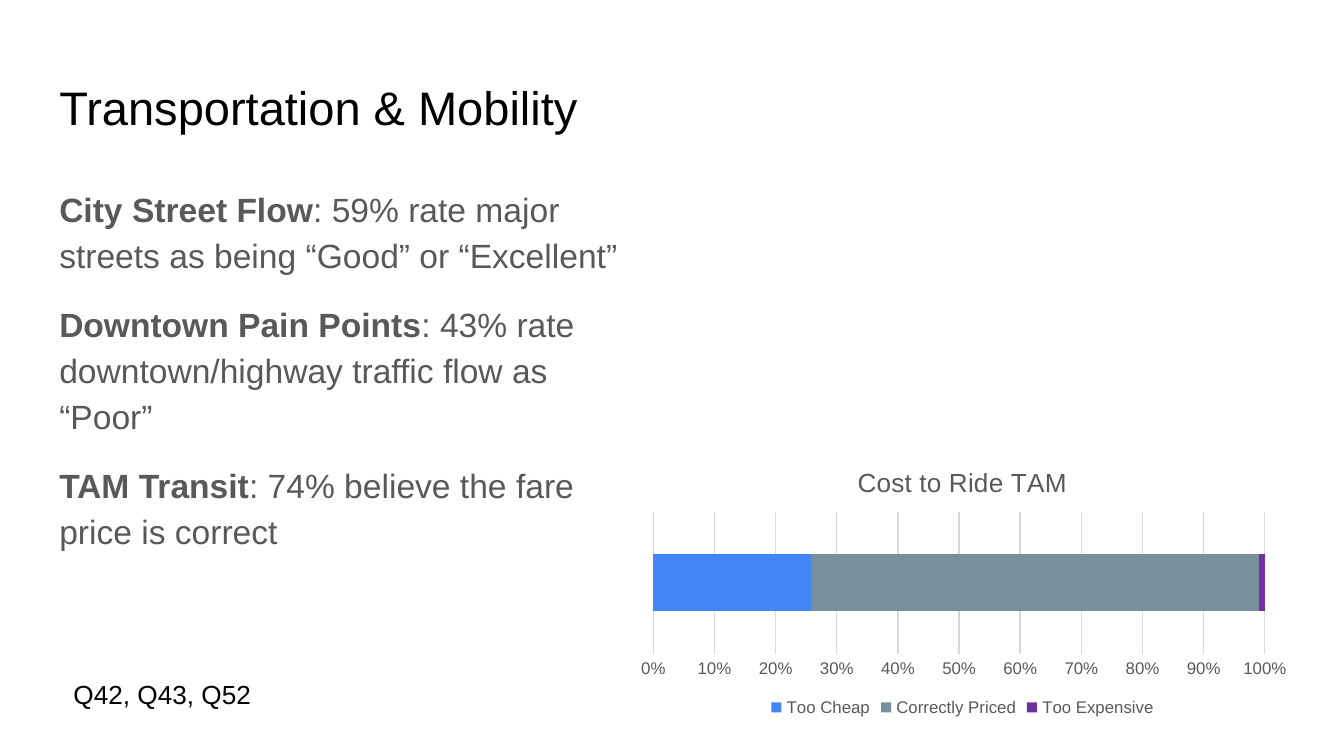
import pptx
import pptx.chart.data
import pptx.dml.color
import pptx.enum.chart
import pptx.enum.text
import pptx.oxml
import pptx.oxml.ns
import pptx.util
from pptx.util import Cm

FONT = "Arial"
BLACK = "000000"
GRAY = "595959"
TITLE = "Transportation & Mobility"
FINDINGS = [
    ("City Street Flow", ": 59% rate major streets as being “Good” or “Excellent”"),
    ("Downtown Pain Points", ": 43% rate downtown/highway traffic flow as “Poor”"),
    ("TAM Transit", ": 74% believe the fare price is correct"),
]
FARE_OPINIONS = [
    ("Too Cheap", 26, "4285F4"),
    ("Correctly Priced", 74, "78909C"),
    ("Too Expensive", 1, "7030A0"),
]
CHART_NAMESPACE = pptx.oxml.ns.nsdecls("c", "a")


def color(value):
    return pptx.dml.color.RGBColor.from_string(value)


def set_values(target, values):
    for name, value in values.items():
        setattr(target, name, value)


def format_font(font, size, fill, bold=False):
    set_values(font, {"name": FONT, "size": pptx.util.Pt(size), "bold": bold})
    font.fill.solid()
    font.fill.fore_color.rgb = color(fill)


def place(shape, left, top, width, height):
    set_values(shape, {"left": Cm(left), "top": Cm(top), "width": Cm(width), "height": Cm(height)})
    margins = ("margin_left", "margin_top", "margin_right", "margin_bottom")
    set_values(shape.text_frame, {name: Cm(0.25) for name in margins})
    set_values(shape.text_frame, {
        "word_wrap": True,
        "auto_size": pptx.enum.text.MSO_AUTO_SIZE.NONE,
        "vertical_anchor": pptx.enum.text.MSO_ANCHOR.TOP,
    })


def write_line(shape, text, size):
    paragraph = shape.text_frame.paragraphs[0]
    paragraph.alignment = pptx.enum.text.PP_ALIGN.LEFT
    run = paragraph.add_run()
    run.text = text
    format_font(run.font, size, BLACK)


def write_findings(shape):
    text_frame = shape.text_frame
    for index, finding in enumerate(FINDINGS):
        paragraph = text_frame.add_paragraph() if index else text_frame.paragraphs[0]
        properties = paragraph._p.get_or_add_pPr()
        properties.set("marL", "0")
        properties.set("indent", "0")
        pptx.oxml.ns.qn("a:buNone")
        properties.append(pptx.oxml.parse_xml(f'<a:buNone {pptx.oxml.ns.nsdecls("a")}/>'))
        set_values(paragraph, {
            "line_spacing": 1.15,
            "space_before": pptx.util.Pt(12 if index else 0),
            "space_after": pptx.util.Pt(12 if index == len(FINDINGS) - 1 else 0),
        })
        for text, bold in zip(finding, (True, False)):
            run = paragraph.add_run()
            run.text = text
            format_font(run.font, 18, GRAY, bold)


def format_axes(chart):
    chart.category_axis.visible = False
    axis = chart.value_axis
    set_values(axis, {
        "minimum_scale": 0,
        "maximum_scale": 1,
        "major_unit": 0.1,
        "has_major_gridlines": True,
        "major_tick_mark": pptx.enum.chart.XL_TICK_MARK.NONE,
    })
    set_values(axis.tick_labels, {"number_format": "0%", "number_format_is_linked": False})
    format_font(axis.tick_labels.font, 9, GRAY)
    axis.format.line.fill.background()
    gridline = axis.major_gridlines.format.line
    gridline.color.rgb = color("D9D9D9")
    gridline.width = pptx.util.Pt(0.75)


def fix_plot_area(chart, left, top, width, height):
    plot_area = chart._chartSpace.chart.plotArea
    for layout in plot_area.findall(pptx.oxml.ns.qn("c:layout")):
        plot_area.remove(layout)
    values = {"layoutTarget": "inner", "xMode": "edge", "yMode": "edge",
              "x": left, "y": top, "w": width, "h": height}
    parts = "".join(f'<c:{name} val="{value}"/>' for name, value in values.items())
    plot_area.insert(0, pptx.oxml.parse_xml(
        f"<c:layout {CHART_NAMESPACE}><c:manualLayout>{parts}</c:manualLayout></c:layout>"))


def fill_chart(chart, fill):
    chart._chartSpace.chart.addnext(pptx.oxml.parse_xml(
        f'<c:spPr {CHART_NAMESPACE}><a:solidFill><a:srgbClr val="{fill}"/></a:solidFill>'
        "<a:ln><a:noFill/></a:ln></c:spPr>"))


def add_fare_chart(slide):
    data = pptx.chart.data.CategoryChartData()
    data.categories = ["1"]
    for name, value, _ in FARE_OPINIONS:
        data.add_series(name, [value])
    chart = slide.shapes.add_chart(
        pptx.enum.chart.XL_CHART_TYPE.BAR_STACKED_100,
        Cm(11.84), Cm(8.48), Cm(12.7), Cm(5.18), data).chart
    format_font(chart.font, 10, BLACK)
    set_values(chart, {"has_title": True, "has_legend": True})
    title = chart.chart_title
    title.include_in_layout = False
    run = title.text_frame.paragraphs[0].add_run()
    run.text = "Cost to Ride TAM"
    format_font(run.font, 14, GRAY)
    set_values(chart.legend, {
        "position": pptx.enum.chart.XL_LEGEND_POSITION.BOTTOM,
        "include_in_layout": False,
    })
    format_font(chart.legend.font, 9, GRAY)
    plot = chart.plots[0]
    set_values(plot, {"gap_width": 150, "overlap": 100, "vary_by_categories": False})
    for series, (_, _, fill) in zip(plot.series, FARE_OPINIONS):
        series.format.fill.solid()
        series.format.fill.fore_color.rgb = color(fill)
    format_axes(chart)
    fix_plot_area(chart, 0.04, 0.23, 0.91, 0.52)
    fill_chart(chart, "FFFFFF")


def main():
    presentation = pptx.Presentation()
    set_values(presentation, {"slide_width": Cm(25.4), "slide_height": Cm(14.29)})
    slide = presentation.slides.add_slide(presentation.slide_layouts[1])
    title, body = slide.placeholders
    place(title, 0.87, 1.24, 23.67, 1.6)
    write_line(title, TITLE, 25.2)
    place(body, 0.87, 3.2, 11.33, 9.5)
    write_findings(body)
    add_fare_chart(slide)
    questions = slide.shapes.add_textbox(0, 0, 0, 0)
    place(questions, 1.14, 12.7, 5.03, 0.86)
    set_values(questions.text_frame, {
        "margin_top": Cm(0.13),
        "margin_bottom": Cm(0.13),
        "auto_size": pptx.enum.text.MSO_AUTO_SIZE.SHAPE_TO_FIT_TEXT,
    })
    write_line(questions, "Q42, Q43, Q52", 14)
    presentation.save("out.pptx")


if __name__ == "__main__":
    main()
